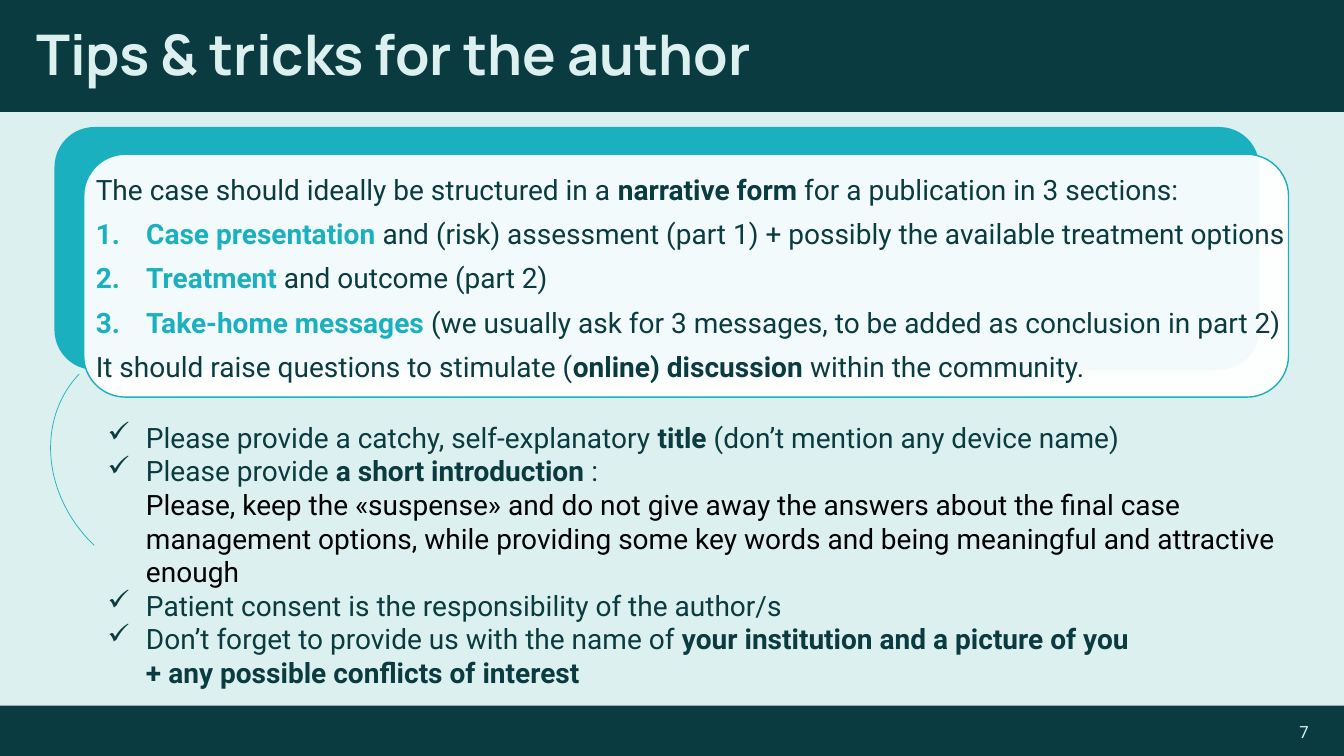
"""Builds the slide of tips and tricks for the author."""
from lxml import etree
from pptx import Presentation
from pptx import util as u
from pptx.dml.color import RGBColor
from pptx.enum import shapes, text
from pptx.oxml import ns

COLORS = {"dark": "093B40", "pale": "DCF0EF", "teal": "1BB0BF",
          "white": "FFFFFF", "black": "000000"}
SLIDE_W, SLIDE_H = 13.33, 7.5
BODY = {"size": u.Pt(20), "name": "Roboto", "bold": False}
BOLD = {"bold": True}
TEAL = {"bold": True, "color": "teal"}
BLACK = {"color": "black"}

STRUCTURE = [
    (None, [("The case should ideally be structured in a ", {}), ("narrative form", BOLD),
            (" for a publication in 3 sections:", {})]),
    ("number", [("Case presentation ", TEAL),
                ("and (risk) assessment (part 1) + possibly the available treatment options", {})]),
    ("number", [("Treatment", TEAL), (" and outcome (part 2)", {})]),
    ("number", [("Take-home messages ", TEAL),
                ("(we usually ask for 3 messages, to be added as conclusion in part 2)", {})]),
    (None, [("It should raise questions to stimulate (", {}), ("online) discussion", BOLD),
            (" within the community.", {})]),
]
CHECKLIST = [
    ("check", [("Please provide a catchy, self-explanatory ", {}), ("title ", BOLD),
               ("(don’t mention any device name)", {})]),
    ("check", [("Please provide ", {}), ("a short introduction ", BOLD), (": \n", {}),
               ("Please, keep the «suspense» and do not give away the answers about the final case "
                "management options, while providing some key words and being meaningful and "
                "attractive enough", BLACK)]),
    ("check", [("Patient consent is the responsibility of the author/s", {})]),
    ("check", [("Don’t forget to provide us with the name of ", {}),
               ("your institution and a picture of you \n+ any possible conflicts of interest", BOLD)]),
]
BULLETS = {"number": ("a:buAutoNum", {"type": "arabicPeriod"}, 0.5),
           "check": ("a:buChar", {"char": "✓"}, 0.38)}


def rgb(name):
    """Return the named colour."""
    return RGBColor.from_string(COLORS[name])


def add_shape(s, kind, box, fill=None, line=None, width=1):
    """Add a shape without shadow; fill and line are colour names."""
    sp = s.shapes.add_shape(kind, *map(u.Inches, box))
    sp.shadow.inherit = False
    if fill:
        sp.fill.solid()
        sp.fill.fore_color.rgb = rgb(fill)
    else:
        sp.fill.background()
    if line:
        sp.line.color.rgb = rgb(line)
        sp.line.width = u.Pt(width)
    else:
        sp.line.fill.background()
    return sp


def add_runs(p, runs, base, color):
    """Add formatted runs to a paragraph, with a line break at each newline."""
    for words, change in runs:
        values = {**base, "color": color, **change}
        tint = values.pop("color")
        for i, part in enumerate(words.split("\n")):
            if i:
                p.add_line_break()
            if part:
                r = p.add_run()
                r.text = part
                r.font.color.rgb = rgb(tint)
                for key, value in values.items():
                    setattr(r.font, key, value)


def add_bullet(p, kind):
    """Give a paragraph a hanging number or check mark."""
    tag, attrs, indent = BULLETS[kind]
    pPr = p._p.get_or_add_pPr()
    pPr.set("marL", str(u.Inches(indent)))
    pPr.set("indent", str(-u.Inches(indent)))
    etree.SubElement(pPr, ns.qn(tag), attrs)


def add_text(s, box, paragraphs, base, color, frame=None, layout=None):
    """Add a wrapping text box of (bullet, runs) paragraphs."""
    tf = s.shapes.add_textbox(*map(u.Inches, box)).text_frame
    for key, value in {"word_wrap": True, **(frame or {})}.items():
        setattr(tf, key, value)
    for i, (bullet, runs) in enumerate(paragraphs):
        p = tf.add_paragraph() if i else tf.paragraphs[0]
        for key, value in (layout or {}).items():
            setattr(p, key, value)
        if bullet:
            add_bullet(p, bullet)
        add_runs(p, runs, base, color)


def add_header(s, x, y, w, h):
    """Draw the top band and the title."""
    add_shape(s, shapes.MSO_SHAPE.RECTANGLE, (x, y, w, h), "dark")
    add_text(s, (x + 0.26, y + 0.15, w - 0.52, h - 0.28),
             [(None, [("Tips & tricks for the author", {})])],
             {"size": u.Pt(40), "name": "Manrope", "bold": True}, "pale",
             {"vertical_anchor": text.MSO_ANCHOR.MIDDLE}, {"line_spacing": 0.9})


def add_footer(s, x, y, w, h):
    """Draw the bottom band and the slide number."""
    add_shape(s, shapes.MSO_SHAPE.RECTANGLE, (x, y, w, h), "dark")
    add_text(s, (x + w - 3.91, y + 0.1, 3.66, 0.31), [(None, [("7", {})])],
             {**BODY, "size": u.Pt(12)}, "pale",
             {"vertical_anchor": text.MSO_ANCHOR.MIDDLE}, {"alignment": text.PP_ALIGN.RIGHT})


def add_structure_card(s, x, y, w, h):
    """Draw the two offset cards and the structure of a case."""
    rounded = shapes.MSO_SHAPE.ROUNDED_RECTANGLE
    back = add_shape(s, rounded, (x, y, w, h), "teal")
    front = add_shape(s, rounded, (x + 0.29, y + 0.27, w, h), "white", "teal")
    for card, radius in ((back, 0.165), (front, 0.172)):
        card.adjustments[0] = radius
    white = front.fill._xPr.find(".//" + ns.qn("a:srgbClr"))
    etree.SubElement(white, ns.qn("a:alpha"), {"val": "95000"})
    margins = {f"margin_{side}": u.Inches(0.08) for side in ("left", "top", "right", "bottom")}
    add_text(s, (x + 0.33, y + 0.44, w + 0.13, h - 0.3), STRUCTURE, BODY, "dark",
             {**margins, "vertical_anchor": text.MSO_ANCHOR.MIDDLE}, {"space_after": u.Pt(7.5)})


def add_checklist(s, x, y, w, h):
    """Write the checklist and draw the arc that links it to the card."""
    add_text(s, (x, y, w, h), CHECKLIST, BODY, "dark")
    arc = add_shape(s, shapes.MSO_SHAPE.ARC, (x - 0.54, y - 0.65, 2.56, 2.25),
                    line="teal", width=0.5)
    arc.rotation = 223.6


def main():
    """Build and save the slide."""
    prs = Presentation()
    prs.slide_width, prs.slide_height = u.Inches(SLIDE_W), u.Inches(SLIDE_H)
    s = prs.slides.add_slide(prs.slide_layouts[6])
    s.background.fill.solid()
    s.background.fill.fore_color.rgb = rgb("pale")
    add_footer(s, 0, SLIDE_H - 0.5, SLIDE_W, 0.5)
    add_header(s, 0, 0, SLIDE_W, 1.11)
    add_structure_card(s, 0.54, 1.26, 11.95, 2.41)
    add_checklist(s, 0.97, 4.12, 11.87, 2.79)
    prs.save("out.pptx")


if __name__ == "__main__":
    main()
